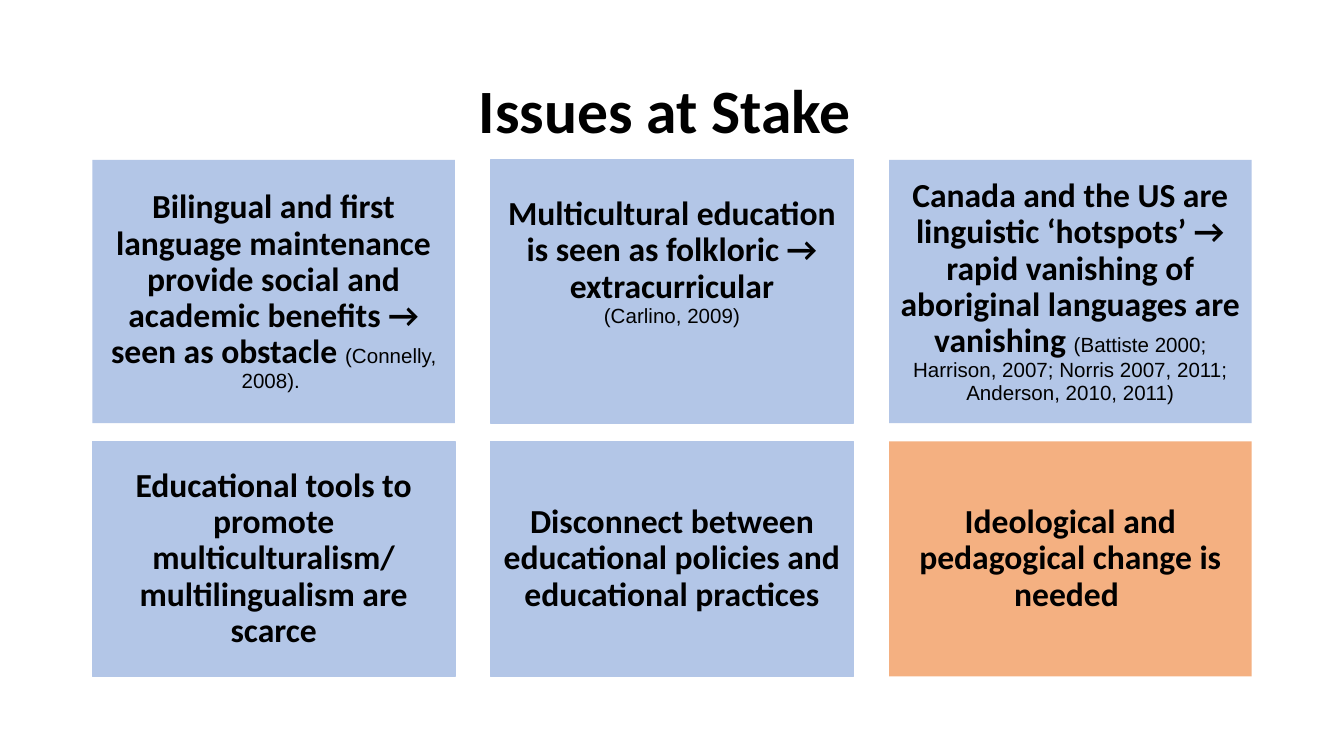
from pptx import Presentation
from pptx.dml.color import RGBColor
from pptx.enum.shapes import MSO_SHAPE
from pptx.enum.text import MSO_ANCHOR, PP_ALIGN
from pptx.util import Pt

RECT = MSO_SHAPE.RECTANGLE
MIDDLE = MSO_ANCHOR.MIDDLE
CENTER = PP_ALIGN.CENTER
BLUE, ORANGE, BLACK = "B3C6E7", "F4B081", "000000"


def color(code):
    return RGBColor.from_string(code)


def write(frame, text, size=18, cite="", apart=False, pad=4.5, foot=4.5):
    """Set bold text, then a small citation on the same or its own line."""
    frame.word_wrap = True
    frame.vertical_anchor = MIDDLE
    frame.margin_left = frame.margin_right = frame.margin_top = Pt(pad)
    frame.margin_bottom = Pt(foot)
    para = frame.paragraphs[0]
    parts = [(line, "Calibri", size, True) for line in text.split("\n")]
    if cite:
        parts.append((cite, "Arial", 11, False))
    for i, (words, face, points, bold) in enumerate(parts):
        if i and bold:
            para.add_line_break()
        if apart and not bold:
            para = frame.add_paragraph()
        para.alignment = CENTER
        para.line_spacing = 0.9
        run = para.add_run()
        run.text = words
        run.font.name = face
        run.font.size = Pt(points)
        run.font.bold = bold
        run.font.color.rgb = color(BLACK)


deck = Presentation()
deck.slide_width, deck.slide_height = Pt(720), Pt(405)
slide = deck.slides.add_slide(deck.slide_layouts[6])

# Title
title = slide.shapes.add_textbox(Pt(49.5), Pt(21.6), Pt(621), Pt(78.5))
write(title.text_frame, "Issues at Stake ", size=33)

# Cards: text, fill, outlined, text options
cards = [
    ("Bilingual and first language maintenance provide social and "
     "academic benefits → seen as obstacle ", BLUE, False,
     {"cite": "(Connelly, 2008). "}),
    ("Multicultural education is seen as folkloric → extracurricular",
     BLUE, True, {"cite": "(Carlino, 2009)", "apart": True, "foot": 36}),
    ("Canada and the US are linguistic ‘hotspots’ → rapid vanishing of "
     "aboriginal languages are vanishing ", BLUE, False,
     {"cite": "(Battiste 2000; Harrison, 2007; Norris 2007, 2011; "
              "Anderson, 2010, 2011)"}),
    ("Educational tools to promote multiculturalism/\n"
     "multilingualism are scarce", BLUE, True, {}),
    ("Disconnect between educational policies and educational practices",
     BLUE, True, {}),
    ("Ideological and pedagogical change is needed ", ORANGE, False,
     {"pad": 5, "foot": 5}),
]

# Grid of three columns and two rows
left, wide, step = 49.5, 194.3, 213.4
rows = [(85.7, 141), (236.4, 126)]
for i, (text, fill, lined, form) in enumerate(cards):
    row, col = divmod(i, 3)
    top, high = rows[row]
    card = slide.shapes.add_shape(
        RECT, Pt(left + col * step), Pt(top), Pt(wide), Pt(high))
    card.shadow.inherit = False
    card.fill.solid()
    card.fill.fore_color.rgb = color(fill)
    if lined:
        card.line.color.rgb = color(fill)
        card.line.width = Pt(0.75)
    else:
        card.line.fill.background()
    write(card.text_frame, text, **form)

deck.save("out.pptx")
